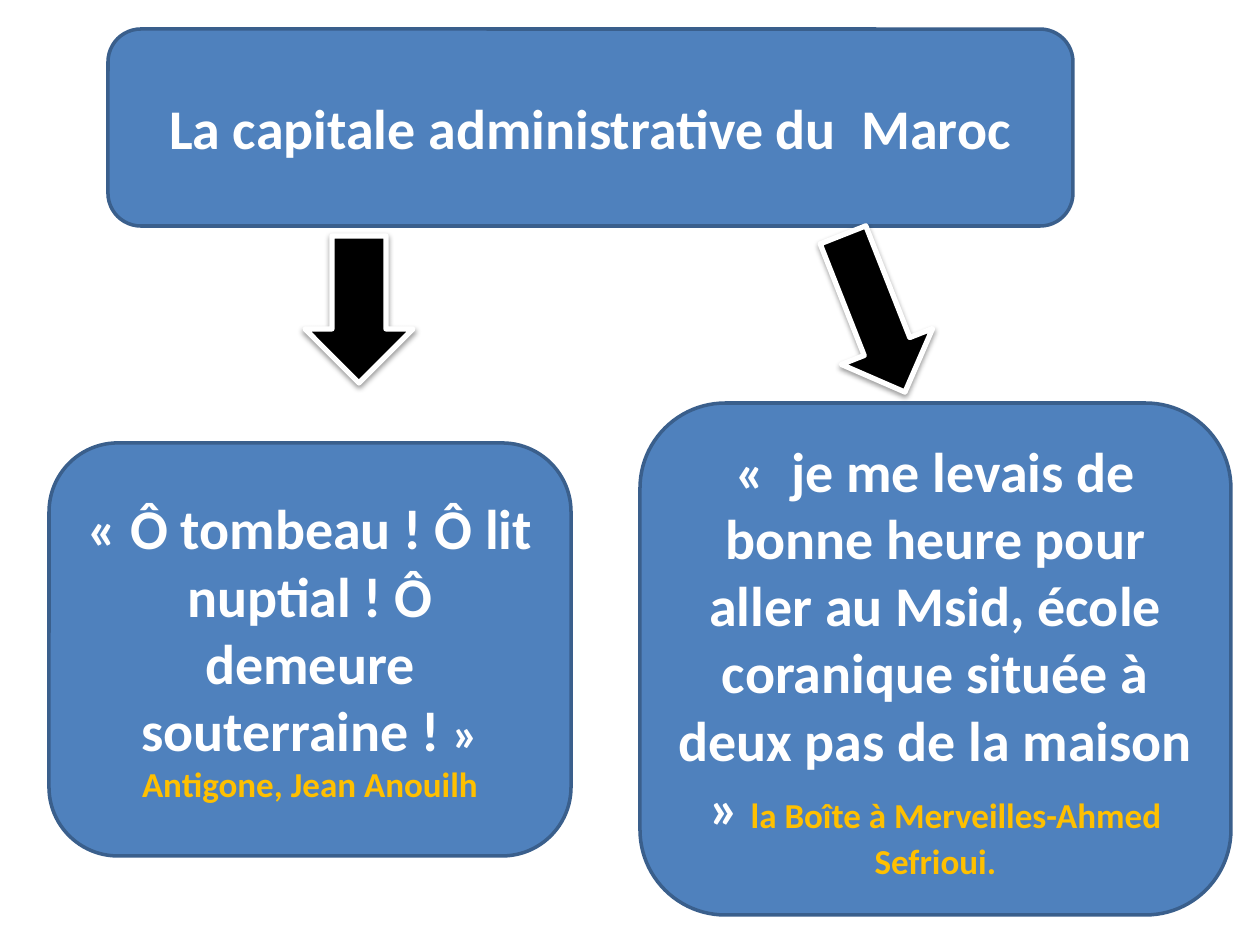
from dataclasses import dataclass
from lxml.etree import SubElement as Sub
from pptx import Presentation
from pptx.dml.color import RGBColor as RGB
from pptx.enum.shapes import MSO_SHAPE as Kind
from pptx.enum.text import MSO_ANCHOR as Anchor, PP_ALIGN as Align
from pptx.oxml.ns import qn
from pptx.util import Pt

SCALE = 914400 / 126


@dataclass(frozen=True)
class Theme:
    font: str = "Calibri"
    blue: str = "4F81BD"
    edge: str = "3A5F8C"
    white: str = "FFFFFF"
    black: str = "000000"
    gold: str = "FFC000"
    large: int = 32
    mid: int = 28
    small: int = 20


THEME = Theme()


def px(count):
    return round(count * SCALE)


def draw(slide, kind, area, fill, edge, width):
    shape = slide.shapes.add_shape(kind, *map(px, area))
    shape.shadow.inherit = False
    shape.fill.solid()
    shape.fill.fore_color.rgb = RGB.from_string(fill)
    shape.line.color.rgb = RGB.from_string(edge)
    shape.line.width = Pt(width)
    return shape


def write(para, text, size=THEME.large, color=THEME.white, bold=True):
    run = para.add_run()
    run.text = text
    run.font.name = THEME.font
    run.font.size = Pt(size)
    run.font.bold = bold
    run.font.color.rgb = RGB.from_string(color)


def add_box(slide, area, parts):
    box = draw(slide, Kind.ROUNDED_RECTANGLE, area, THEME.blue, THEME.edge, 2)
    frame = box.text_frame
    frame.word_wrap = True
    frame.vertical_anchor = Anchor.MIDDLE
    para = frame.paragraphs[0]
    para.alignment = Align.CENTER
    for text, style in parts:
        write(para, text, **style)


def add_arrow(slide, area, angle=0):
    arrow = draw(slide, Kind.DOWN_ARROW, area, THEME.black, THEME.white, 3)
    arrow.rotation = angle
    effects = arrow._element.spPr.find(qn("a:effectLst"))
    shade = Sub(effects, qn("a:outerShdw"), blurRad=str(Pt(3.1)),
                dist=str(Pt(1.6)), dir="5400000", rotWithShape="0")
    color = Sub(shade, qn("a:srgbClr"), val=THEME.black)
    Sub(color, qn("a:alpha"), val="38000")


def main():
    deck = Presentation()
    deck.slide_width, deck.slide_height = px(1260), px(945)
    slide = deck.slides.add_slide(deck.slide_layouts[6])
    mid = {"size": THEME.mid}
    credit = {"size": THEME.small, "color": THEME.gold}

    add_box(slide, (108, 29, 965, 197),
            [("La capitale administrative du  Maroc", {})])
    add_arrow(slide, (305, 236, 108, 147))
    add_box(slide, (49, 443, 522, 413), [
        ("« Ô tombeau ! Ô lit nuptial ! Ô demeure souterraine ! ", {}),
        ("» ", mid),
        ("Antigone, Jean Anouilh", credit),
    ])
    add_box(slide, (640, 403, 591, 512), [
        ("«  je me levais de bonne heure pour aller au Msid, "
         "école coranique située à deux pas de la maison »", {}),
        (" ", mid),
        ("la Boîte à Merveilles-Ahmed Sefrioui.", credit),
    ])
    add_arrow(slide, (825, 229, 98, 169), angle=338.5)
    deck.save("out.pptx")


if __name__ == "__main__":
    main()
